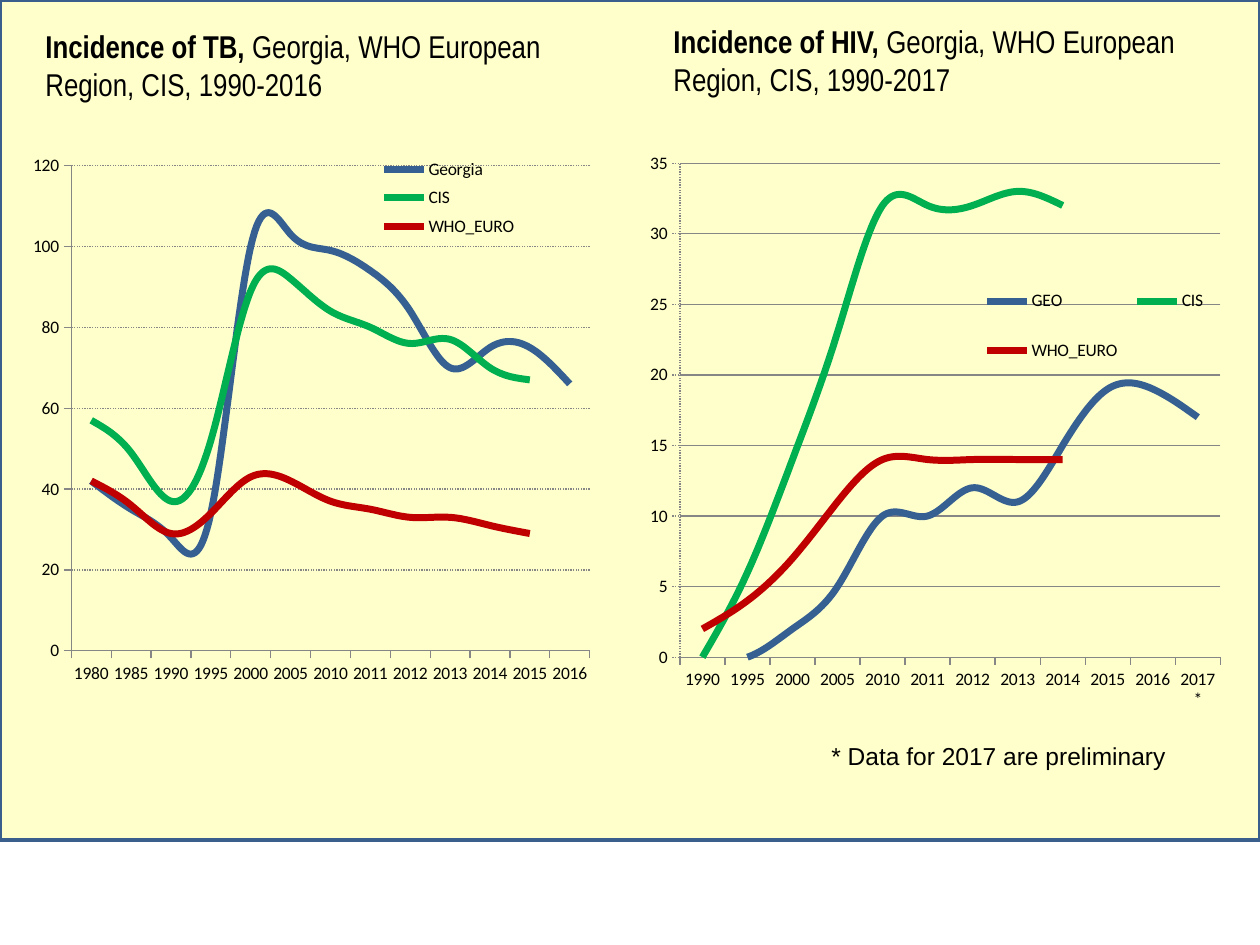
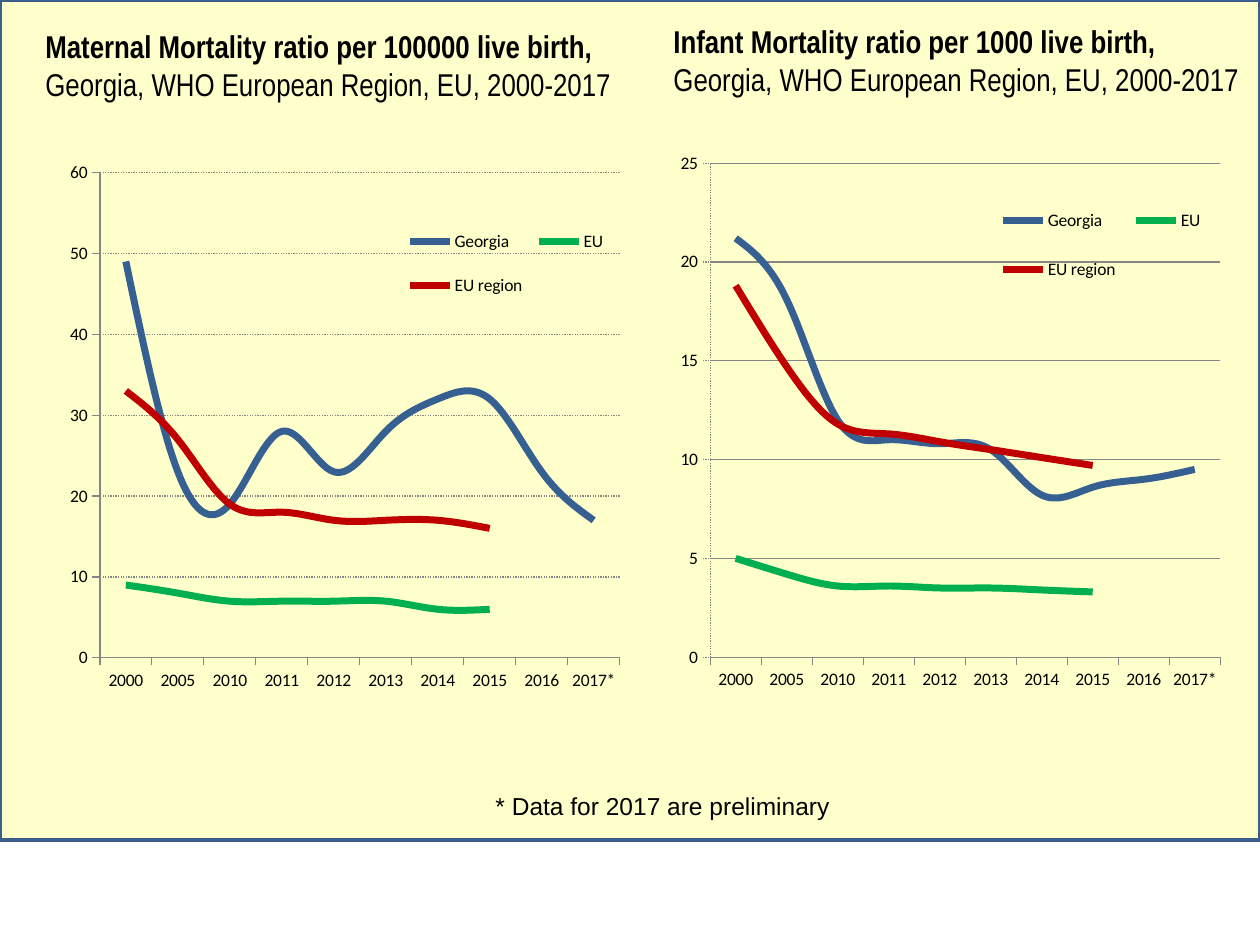
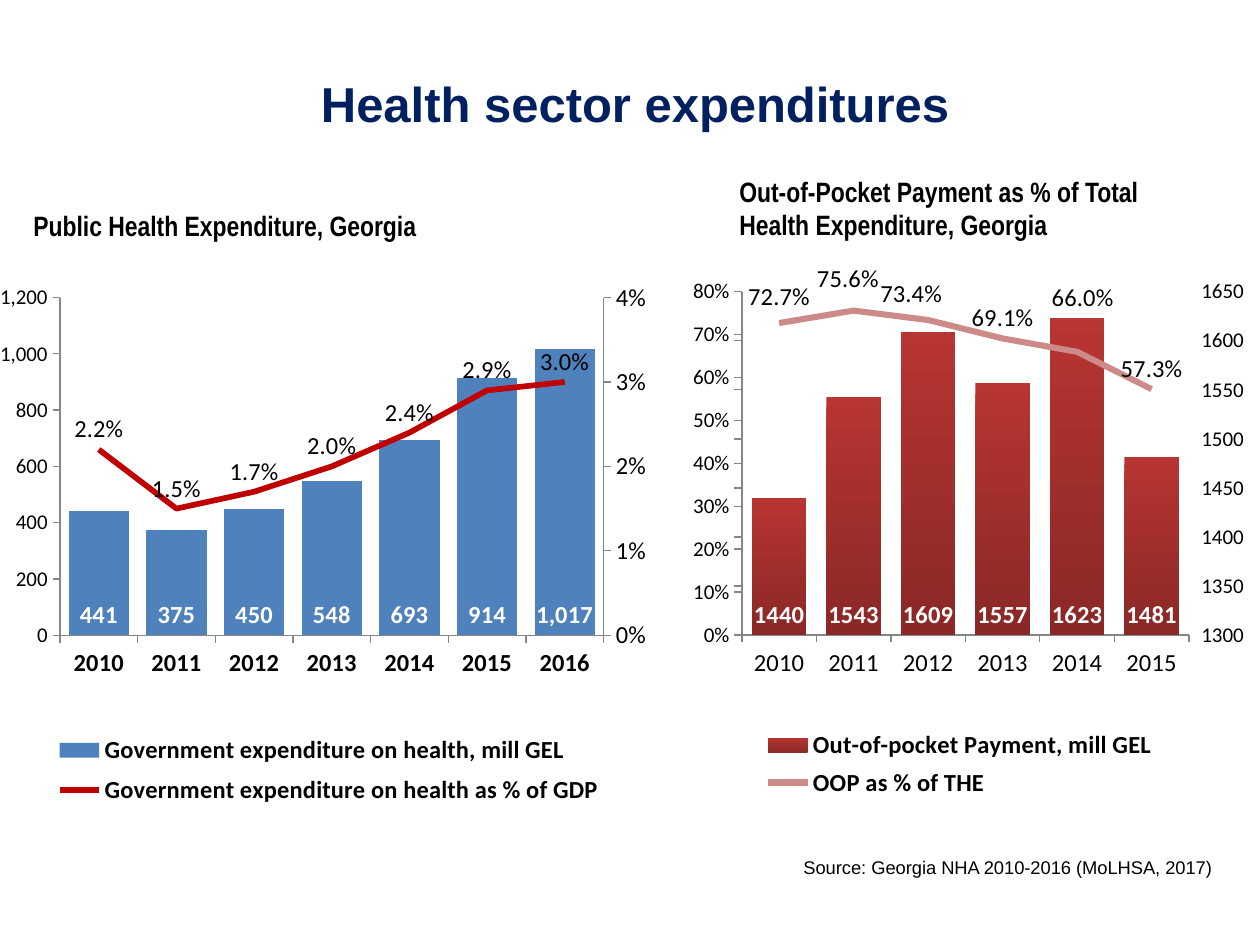
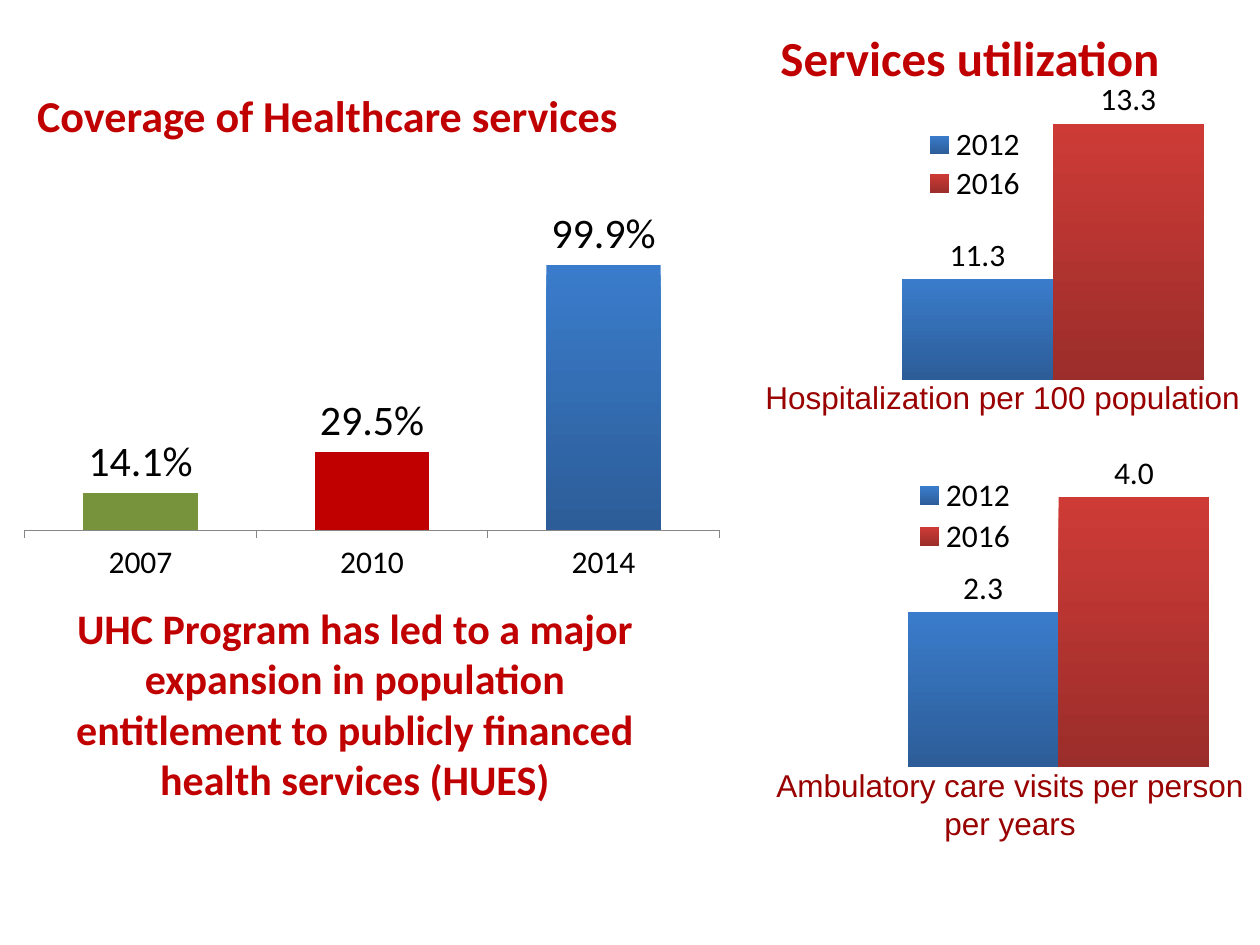
from pptx import Presentation
from pptx import oxml as ox
from pptx import util as u
from pptx.chart import axis as ax
from pptx.chart.data import CategoryChartData
from pptx.dml.color import RGBColor
from pptx.enum import chart as ec
from pptx.enum import dml, shapes, text
from pptx.oxml import ns

PX = 914400 / 126
C = {
    "black": "000000", "white": "FFFFFF", "cream": "FFFFCC", "edge": "3A5F8C",
    "navy": "002060", "red": "C00000", "wine": "990000", "axis": "868686",
    "blue": "376092", "green": "00B050", "olive": "77933C", "bar": "4F81BD",
    "rose": "CC8B89",
}
C = {name: RGBColor.from_string(code) for name, code in C.items()}
SHADE = {"sky": ("3A7CCB", "2C5D98"), "coral": ("CE3B37", "9B2D2A"), "brick": ("B73532", "8A2826")}
COLUMN, LINE = ec.XL_CHART_TYPE.COLUMN_CLUSTERED, ec.XL_CHART_TYPE.LINE
SPOT = ec.XL_LABEL_POSITION
DOT = dml.MSO_LINE.ROUND_DOT
MID = text.PP_ALIGN.CENTER


def put(slide, box, words, lead="", size=18, font="Arial", color="black", bold=False,
        align=None, anchor=text.MSO_ANCHOR.TOP, wrap=True, shape=None):
    """Write words, after an optional bold lead, in a new box or a given placeholder."""
    x, y, w, h = [int(n * PX) for n in box]
    shape = shape or slide.shapes.add_textbox(x, y, w, h)
    shape.left, shape.top, shape.width, shape.height = x, y, w, h
    frame = shape.text_frame
    frame.word_wrap = wrap
    frame.auto_size = text.MSO_AUTO_SIZE.NONE
    frame.vertical_anchor = anchor
    para = frame.paragraphs[0]
    para.alignment = align
    for part, heavy in ((lead, True), (words, bold)):
        if part:
            run = para.add_run()
            run.text = part
            run.font.size, run.font.name, run.font.bold = u.Pt(size), font, heavy
            run.font.color.rgb = C[color]


def graph(slide, kind, box, cats, rows, plot, top, low=0, unit=None, key=None,
          size=10, keysize=10, keybold=False):
    """Add a chart; plot is in shares of the box, key (the legend) in px of the slide."""
    data = CategoryChartData()
    data.categories = cats
    for name, vals, _ in rows:
        data.add_series(name, vals)
    chart = slide.shapes.add_chart(kind, *[int(n * PX) for n in box], data).chart
    chart.has_title = False
    chart.font.size, chart.font.name = u.Pt(18), "Calibri"
    chart.font.color.rgb = C["black"]
    chart.plots[0].vary_by_categories = False

    # Series
    for ser, (_, _, color) in zip(chart.plots[0].series, rows):
        if kind == LINE:
            ser.smooth = True
            ser.format.line.width = u.Pt(4)
            ser.format.line.color.rgb = C[color]
        elif color in SHADE:
            fill = ser.format.fill
            fill.gradient()
            fill.gradient_angle = 270
            for stop, code in zip(fill.gradient_stops, SHADE[color]):
                stop.color.rgb = RGBColor.from_string(code)
        elif color:
            ser.format.fill.solid()
            ser.format.fill.fore_color.rgb = C[color]

    # Axes
    val = chart.value_axis
    val.minimum_scale, val.maximum_scale, val.major_unit = low, top, unit
    val.has_major_gridlines = False
    for axis in (chart.category_axis, val):
        axis.tick_labels.font.size = u.Pt(size)
        axis.format.line.color.rgb = C["axis"]
        axis.format.line.width = u.Pt(0.75)

    # Plot area and legend places
    area = chart.element.find(".//" + ns.qn("c:plotArea"))
    spots = [(area, plot)]
    chart.has_legend = key is not None
    if key:
        chart.legend.position = ec.XL_LEGEND_POSITION.RIGHT
        chart.legend.include_in_layout = False
        chart.legend.font.size, chart.legend.font.bold = u.Pt(keysize), keybold
        x, y, w, h = box
        share = ((key[0] - x) / w, (key[1] - y) / h, key[2] / w, key[3] / h)
        spots.append((chart.element.find(".//" + ns.qn("c:legend")), share))
    for host, (x, y, w, h) in spots:
        old = host.find(ns.qn("c:layout"))
        if old is not None:
            host.remove(old)
        inner = '<c:layoutTarget val="inner"/>' if host is area else ""
        host.insert(0 if host is area else 1, ox.parse_xml(
            f'<c:layout {ns.nsdecls("c")}><c:manualLayout>{inner}'
            '<c:xMode val="edge"/><c:yMode val="edge"/>'
            f'<c:x val="{x:.3f}"/><c:y val="{y:.3f}"/><c:w val="{w:.3f}"/><c:h val="{h:.3f}"/>'
            '</c:manualLayout></c:layout>'))
    return chart


prs = Presentation()
prs.slide_width, prs.slide_height = u.Inches(10), u.Inches(7.5)
only, blank = prs.slide_layouts[5], prs.slide_layouts[6]

# Slides 1 and 2: two line charts on a cream panel
years = ["2000", "2005", "2010", "2011", "2012", "2013", "2014", "2015", "2016", "2017*"]
gap = [None]
pairs = [
    {
        "note": (819, 735), "tail": "Georgia, WHO European Region, CIS, ",
        "left": {
            "lead": "Incidence of TB, ", "span": "1990-2016",
            "box": (33, 140, 567, 609), "key": (378, 151, 142, 94), "top": 120, "unit": 20,
            "cats": ["1980", "1985", "1990", "1995"] + years[:-1],
            "rows": [
                ("Georgia", [42, 35, 28, 34, 100, 103, 99, 94, 84, 70, 75, 75, 66], "blue"),
                ("CIS", [57, 49, 37, 52, 89, 92, 84, 80, 76, 77, 70, 67] + gap, "green"),
                ("WHO_EURO", [42, 36, 29, 34, 43, 42, 37, 35, 33, 33, 31, 29] + gap, "red")],
        },
        "right": {
            "lead": "Incidence of HIV, ", "span": "1990-2017",
            "box": (631, 126, 590, 620), "key": (973, 262, 245, 128), "top": 35, "unit": 5,
            "cats": ["1990", "1995"] + years,
            "rows": [
                ("GEO", [0, 0, 2, 5, 10, 10, 12, 11, 15, 19, 19, 17], "blue"),
                ("CIS", [0, 6, 14, 23, 32, 32, 32, 33, 32] + gap * 3, "green"),
                ("WHO_EURO", [2, 4, 7, 11, 14, 14, 14, 14, 14] + gap * 3, "red")],
        },
    },
    {
        "note": (483, 785), "tail": "Georgia, WHO European Region, EU, ",
        "left": {
            "lead": "Maternal Mortality ratio per 100000 live birth, ", "span": "2000-2017",
            "box": (63, 147, 567, 609), "key": (399, 207, 215, 112), "top": 60, "unit": 10,
            "cats": years,
            "rows": [
                ("Georgia", [49, 23, 19, 28, 23, 28, 32, 32, 23, 17], "blue"),
                ("EU", [9, 8, 7, 7, 7, 7, 6, 6] + gap * 2, "green"),
                ("EU region", [33, 27, 19, 18, 17, 17, 17, 16] + gap * 2, "red")],
        },
        "right": {
            "lead": "Infant Mortality ratio per 1000 live birth, ", "span": "2000-2017",
            "box": (664, 126, 557, 620), "key": (989, 181, 227, 128), "top": 25, "unit": 5,
            "cats": years,
            "rows": [
                ("Georgia", [21.2, 18.1, 12, 11, 10.8, 10.5, 8.2, 8.6, 9, 9.5], "blue"),
                ("EU", [5, 4.2, 3.6, 3.6, 3.5, 3.5, 3.4, 3.3] + gap * 2, "green"),
                ("EU region", [18.8, 14.7, 11.8, 11.3, 10.9, 10.5, 10.1, 9.7] + gap * 2, "red")],
        },
    },
]
plots = {"left": (0.065, 0.042, 0.917, 0.797), "right": (0.096, 0.06, 0.917, 0.797)}
heads = {"left": (33, 21, 598, 90), "right": (661, 16, 598, 90)}
for pair in pairs:
    slide = prs.slides.add_slide(blank)
    panel = slide.shapes.add_shape(shapes.MSO_SHAPE.RECTANGLE, 0, 0,
                                   prs.slide_width, int(840 * PX))
    panel.shadow.inherit = False
    panel.fill.solid()
    panel.fill.fore_color.rgb = C["cream"]
    panel.line.color.rgb, panel.line.width = C["edge"], u.Pt(2)
    for side in ("right", "left"):
        it = pair[side]
        chart = graph(slide, LINE, it["box"], it["cats"], it["rows"], plots[side],
                      it["top"], unit=it["unit"], key=it["key"])
        val = chart.value_axis
        val.has_major_gridlines = True
        grid = val.major_gridlines.format.line
        grid.color.rgb, grid.width = C["axis"], u.Pt(0.75)
        dotted = grid if side == "left" else val.format.line
        dotted.dash_style = DOT
    put(slide, (*pair["note"], 362, 43), "* Data for 2017 are preliminary", size=14, wrap=False)
    for side, head in heads.items():
        put(slide, head, pair["tail"] + pair[side]["span"], lead=pair[side]["lead"],
            font="Arial Narrow")

# Slide 3: columns with a line on a second axis
slide = prs.slides.add_slide(only)
put(slide, (73, 53, 1124, 100), "Health sector expenditures", size=28, color="navy", bold=True,
    align=MID, anchor=text.MSO_ANCHOR.MIDDLE, shape=slide.shapes.title)
mixes = [
    {
        "box": (0, 278, 651, 562), "plot": (0.088, 0.035, 0.839, 0.601),
        "key": (50, 726, 555, 88), "cats": ["2010", "2011", "2012", "2013", "2014", "2015", "2016"],
        "rows": [
            ("Government expenditure on health, mill GEL",
             [441, 375, 450, 548, 693, 914, 1017], "bar"),
            ("Government expenditure on health as % of GDP",
             [0.022, 0.015, 0.017, 0.02, 0.024, 0.029, 0.03], None)],
        "low": 0, "top": 1200, "unit": 200, "fmt": "#,##0", "gap": 29, "bold": True,
        "line": "red", "width": 3.25, "peak": 0.04, "step": 0.01, "size": 14,
        "cross": "max", "pos": "r", "shift": {},
    },
    {
        "box": (683, 262, 561, 562), "plot": (0.105, 0.053, 0.797, 0.611),
        "key": (765, 723, 390, 82), "cats": ["2010", "2011", "2012", "2013", "2014", "2015"],
        "rows": [
            ("Out-of-pocket Payment, mill GEL", [1440, 1543, 1609, 1557, 1623, 1481], "brick"),
            ("OOP as % of THE", [0.727, 0.756, 0.734, 0.691, 0.66, 0.573], None)],
        "low": 1300, "top": 1650, "unit": 50, "fmt": "General", "gap": 37, "bold": False,
        "line": "rose", "width": 3.5, "peak": 0.8, "step": 0.1, "size": 12,
        "cross": "min", "pos": "l",
        "shift": {0: (0, -0.01), 1: (-0.01, -0.02), 2: (-0.03, -0.01), 4: (0.01, -0.06)},
    },
]
for mix in mixes:
    chart = graph(slide, COLUMN, mix["box"], mix["cats"], mix["rows"], mix["plot"], mix["top"],
                  low=mix["low"], unit=mix["unit"], key=mix["key"], size=12,
                  keysize=14, keybold=True)
    chart.plots[0].gap_width = mix["gap"]
    font = chart.category_axis.tick_labels.font
    font.size, font.bold = u.Pt(14), mix["bold"]
    ticks = chart.value_axis.tick_labels
    ticks.number_format, ticks.number_format_is_linked = mix["fmt"], False
    if mix["pos"] == "l":
        # The columns are read on the right, past the last category
        chart.category_axis.crosses_at = len(mix["cats"]) + 1
        chart.value_axis.tick_label_position = ec.XL_TICK_LABEL_POSITION.HIGH

    # Move the second series to a line chart with its own axes
    area = chart.element.find(".//" + ns.qn("c:plotArea"))
    bars = area.find(ns.qn("c:barChart"))
    ser = bars.findall(ns.qn("c:ser"))[1]
    flag = ser.find(ns.qn("c:invertIfNegative"))
    if flag is not None:
        ser.remove(flag)
    line = ox.parse_xml(
        f'<c:lineChart {ns.nsdecls("c")}><c:grouping val="standard"/><c:varyColors val="0"/>'
        '<c:marker val="1"/><c:axId val="3"/><c:axId val="4"/></c:lineChart>')
    line.insert(2, ser)
    bars.addnext(line)
    for tag, me, other, off, pos, cross in (("catAx", 3, 4, 1, "b", "autoZero"),
                                            ("valAx", 4, 3, 0, mix["pos"], mix["cross"])):
        area.append(ox.parse_xml(
            f'<c:{tag} {ns.nsdecls("c")}><c:axId val="{me}"/>'
            '<c:scaling><c:orientation val="minMax"/></c:scaling>'
            f'<c:delete val="{off}"/><c:axPos val="{pos}"/>'
            '<c:numFmt formatCode="0%" sourceLinked="0"/>'
            '<c:majorTickMark val="out"/><c:minorTickMark val="none"/>'
            f'<c:tickLblPos val="nextTo"/><c:crossAx val="{other}"/>'
            f'<c:crosses val="{cross}"/></c:{tag}>'))
    rate = ax.ValueAxis(area.findall(ns.qn("c:valAx"))[1])
    rate.minimum_scale, rate.maximum_scale, rate.major_unit = 0, mix["peak"], mix["step"]
    rate.tick_labels.font.size = u.Pt(mix["size"])
    rate.format.line.color.rgb, rate.format.line.width = C["axis"], u.Pt(0.75)

    # Line look and labels
    cols, trend = chart.plots[0].series[0], chart.plots[1].series[0]
    trend.smooth = False
    trend.marker.style = ec.XL_MARKER_STYLE.NONE
    trend.format.line.color.rgb = C[mix["line"]]
    trend.format.line.width = u.Pt(mix["width"])
    for ser, spot, fmt, color in ((cols, SPOT.INSIDE_BASE, mix["fmt"], "white"),
                                  (trend, SPOT.ABOVE, "0.0%", "black")):
        tags = ser.data_labels
        tags.show_value, tags.position = True, spot
        tags.number_format, tags.number_format_is_linked = fmt, False
        tags.font.size, tags.font.bold = u.Pt(14), ser is cols
        tags.font.color.rgb = C[color]
    for at in mix["shift"]:
        tag = trend.points[at].data_label
        tag.position = SPOT.ABOVE
        tag.font.size = u.Pt(14)
    for item, (dx, dy) in zip(area.findall(".//" + ns.qn("c:dLbl")), mix["shift"].values()):
        item.insert(1, ox.parse_xml(
            f'<c:layout {ns.nsdecls("c")}><c:manualLayout><c:x val="{dx}"/><c:y val="{dy}"/>'
            '</c:manualLayout></c:layout>'))
    # Moved labels get no leader lines
    group = line.find(".//" + ns.qn("c:dLbls"))
    for old in group.findall(ns.qn("c:showLeaderLines")):
        group.remove(old)
    group.append(ox.parse_xml(f'<c:showLeaderLines {ns.nsdecls("c")} val="0"/>'))

put(slide, (791, 850, 472, 35), "Source: Georgia NHA 2010-2016 (MoLHSA, 2017)", size=10.5)
for box, words in (
        ((727, 168, 494, 81), "Out-of-Pocket Payment as % of Total Health Expenditure, Georgia"),
        ((21, 202, 586, 47), "Public Health Expenditure, Georgia")):
    put(slide, box, words, size=16, font="Arial Narrow", bold=True)

# Slide 4: coverage and use of services
slide = prs.slides.add_slide(only)
loud = {"font": "Calibri", "color": "red", "bold": True, "align": MID}
put(slide, (0, 57, 655, 115), "Coverage of Healthcare services", size=25.2,
    anchor=text.MSO_ANCHOR.MIDDLE, shape=slide.shapes.title, **loud)
put(slide, (35, 596, 640, 83), "UHC Program has led to a major expansion in population "
    "entitlement to publicly financed health services (HUES)", size=24, **loud)

cover = graph(slide, COLUMN, (11, 122, 725, 559), ["2007", "2010", "2014"],
              [("Series 1", [14.1, 29.5, 99.9], "sky")], (0.019, 0.16, 0.958, 0.571), 120, size=18)
cover.plots[0].gap_width = 103
cover.value_axis.visible = False
for at, color in enumerate(("olive", "red")):
    fill = cover.plots[0].series[0].points[at].format.fill
    fill.solid()
    fill.fore_color.rgb = C[color]
labels = [(cover, '0.0"%"', 24)]

for box, vals, plot, low, top, key in (
        ((789, 81, 557, 317), (11.3, 13.3), (0, 0.025, 0.948, 0.917), 10, 13.7,
         (922, 122, 106, 79)),
        ((779, 444, 557, 331), (2.3, 4), (0.028, 0.059, 0.948, 0.917), 0, 4.5,
         (912, 474, 106, 84))):
    rows = [("2012", [vals[0]], "sky"), ("2016", [vals[1]], "coral")]
    use = graph(slide, COLUMN, box, ["1"], rows, plot, top, low=low, key=key, keysize=18)
    use.plots[0].gap_width, use.plots[0].overlap = 150, 0
    use.category_axis.visible = use.value_axis.visible = False
    labels.append((use, "#,##0.0", 18))

for chart, fmt, size in labels:
    for ser in chart.plots[0].series:
        tags = ser.data_labels
        tags.show_value, tags.position = True, SPOT.OUTSIDE_END
        tags.number_format, tags.number_format_is_linked = fmt, False
        tags.font.size = u.Pt(size)

put(slide, (753, 372, 504, 50), "Hospitalization per 100 population", color="wine", wrap=False)
put(slide, (753, 760, 514, 90), "Ambulatory care visits per person per years", color="wine",
    align=MID)
put(slide, (651, 1, 638, 111), "Services utilization", size=28,
    anchor=text.MSO_ANCHOR.MIDDLE, **loud)

prs.save("out.pptx")
